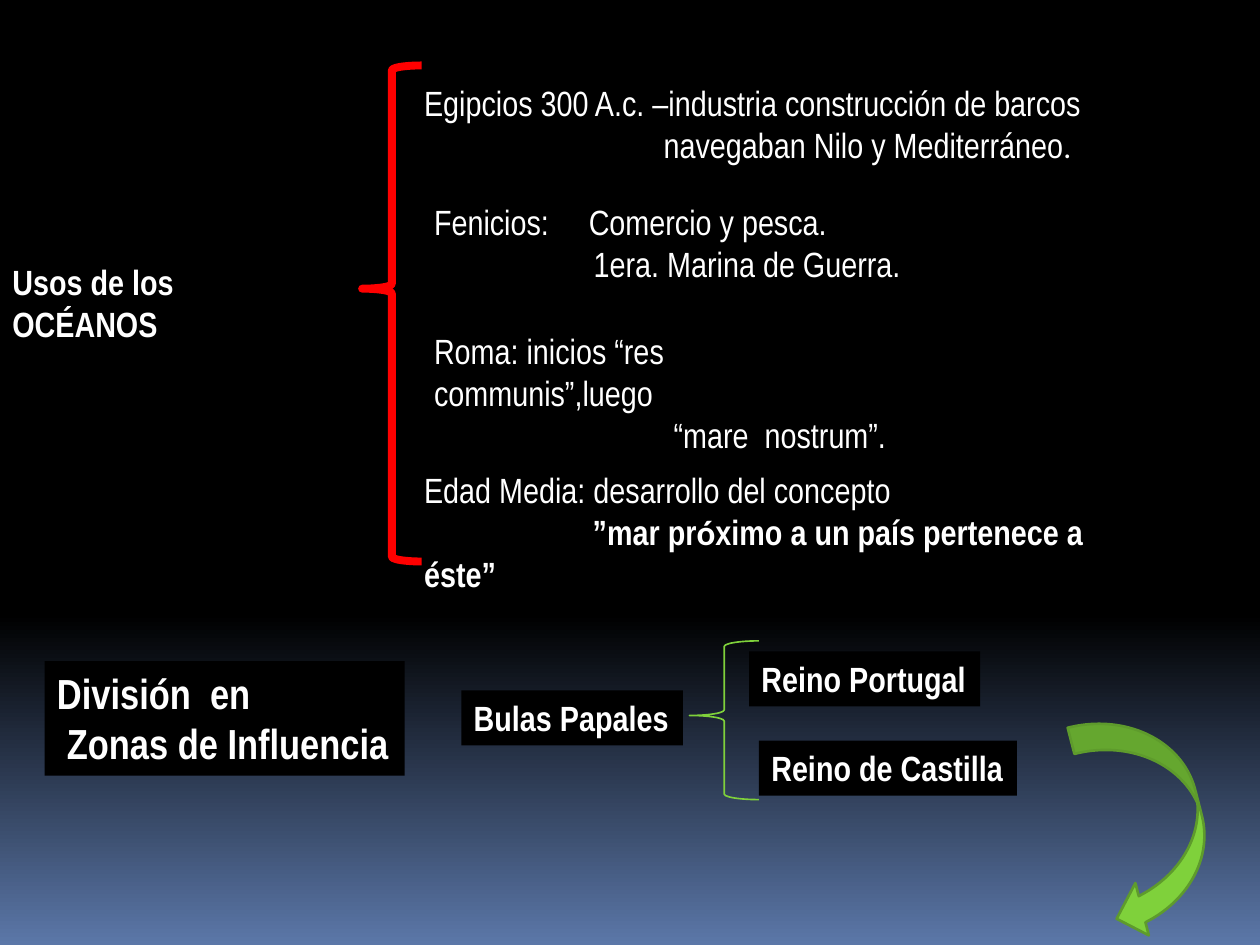
"""Build the slide on the uses of the oceans and the zones of influence."""
from pptx import Presentation
from pptx.dml.color import RGBColor
from pptx.enum.shapes import MSO_SHAPE
from pptx.enum.text import MSO_ANCHOR, PP_ALIGN
from pptx.util import Cm, Pt

BRACE = MSO_SHAPE.LEFT_BRACE
ARROW = MSO_SHAPE.CURVED_DOWN_ARROW
RECT = MSO_SHAPE.RECTANGLE
LEFT = PP_ALIGN.LEFT
TOP = MSO_ANCHOR.TOP
FONT = "Arial Narrow"
COLORS = {
    "black": "000000",
    "white": "FFFFFF",
    "blue": "5B77A8",
    "red": "FF0000",
    "green": "7FD13B",
    "dark_green": "5E9B2C",
}


def rgb(name):
    return RGBColor.from_string(COLORS[name])


def set_background(slide):
    fill = slide.background.fill
    fill.gradient()
    fill.gradient_angle = 270
    for stop, (position, color) in zip(fill.gradient_stops, [(0.65, "black"), (1, "blue")]):
        stop.position = position
        stop.color.rgb = rgb(color)


def add_run(p, text, size=20, bold=False, font=FONT):
    r = p.add_run()
    r.text = text
    r.font.size = Pt(size)
    r.font.bold = bold
    r.font.name = font
    r.font.color.rgb = rgb("white")


def set_indent(p, left=0, first=0, right=0):
    pPr = p._p.get_or_add_pPr()
    for name, value in (("marL", left), ("marR", right), ("indent", first)):
        pPr.set(name, str(Cm(value)))


def add_text(slide, box, lines):
    """Add a wrapping text box; each line is its runs and its indents."""
    tf = slide.shapes.add_textbox(*map(Cm, box)).text_frame
    tf.word_wrap = True
    for i, (runs, indents) in enumerate(lines):
        p = tf.add_paragraph() if i else tf.paragraphs[0]
        set_indent(p, **indents)
        for text, style in runs:
            add_run(p, text, **style)


def add_shape(slide, kind, box, fill=None, line=None, width=1):
    sp = slide.shapes.add_shape(kind, *map(Cm, box))
    sp.shadow.inherit = False
    if fill:
        sp.fill.solid()
        sp.fill.fore_color.rgb = rgb(fill)
    else:
        sp.fill.background()
    if line:
        sp.line.color.rgb = rgb(line)
        sp.line.width = Pt(width)
    else:
        sp.line.fill.background()
    return sp


def add_label(slide, box, lines, size=20):
    tf = add_shape(slide, RECT, box, fill="black").text_frame
    tf.word_wrap = False
    tf.vertical_anchor = TOP
    for i, (text, left) in enumerate(lines):
        p = tf.add_paragraph() if i else tf.paragraphs[0]
        p.alignment = LEFT
        set_indent(p, left)
        add_run(p, text, size, True)


def add_brace(slide, box, middle, color, width):
    sp = add_shape(slide, BRACE, box, line=color, width=width)
    sp.adjustments[0] = 0.08
    sp.adjustments[1] = middle


def main():
    prs = Presentation()
    prs.slide_width, prs.slide_height = Cm(25.4), Cm(19.05)
    slide = prs.slides.add_slide(prs.slide_layouts[6])
    set_background(slide)

    bold = {"bold": True}
    add_text(slide, (0, 5.13, 6.5, 1.1), [([("Usos de los OCÉANOS", bold)], {})])
    add_text(slide, (8.3, 1.52, 13.9, 1.96), [
        ([("Egipcios 300 A.c. –industria construcción de barcos", {})], {}),
        ([("navegaban Nilo y Mediterráneo", {}), (".", {"size": 18, "font": "Calibri"})],
         {"left": 4.83}),
    ])
    add_text(slide, (8.5, 3.92, 3.1, 1.1), [([("Fenicios:", {})], {})])
    add_text(slide, (11.62, 3.92, 9.7, 1.96), [
        ([("Comercio y pesca.", {})], {}),
        ([("1era. Marina de Guerra.", {})], {"left": 0.1}),
    ])
    add_text(slide, (8.5, 6.52, 12, 1.96), [
        ([("Roma: inicios “res communis”,luego", {})], {"right": 3}),
        ([("“mare  nostrum”.", {})], {"left": 4.83}),
    ])
    add_text(slide, (8.3, 9.32, 15.2, 1.96), [
        ([("Edad Media: desarrollo del concepto", {})], {}),
        ([("”mar pr", bold), ("ó", {"bold": True, "font": "Calibri"}),
          ("ximo a un país pertenece a éste”", bold)], {"first": 3.4}),
    ])

    add_label(slide, (9.3, 13.92, 4.47, 1.11), [("Bulas Papales", 0)])
    add_label(slide, (0.9, 13.33, 7.26, 2.31),
              [("División  en", 0), ("Zonas de Influencia", 0.2)], size=24)
    add_label(slide, (15.3, 14.93, 5.2, 1.11), [("Reino de Castilla", 0)])
    add_label(slide, (15.1, 13.13, 4.66, 1.11), [("Reino Portugal", 0)])

    add_brace(slide, (13.9, 12.92, 1.4, 3.2), 0.47, "green", 0.94)
    add_brace(slide, (7.3, 1.32, 1.2, 10), 0.45, "red", 4.5)
    arrow = add_shape(slide, ARROW, (20.88, 15.5, 4.52, 2.18), "green", "dark_green", 1.5)
    arrow.rotation = 75.6

    prs.save("out.pptx")


if __name__ == "__main__":
    main()
